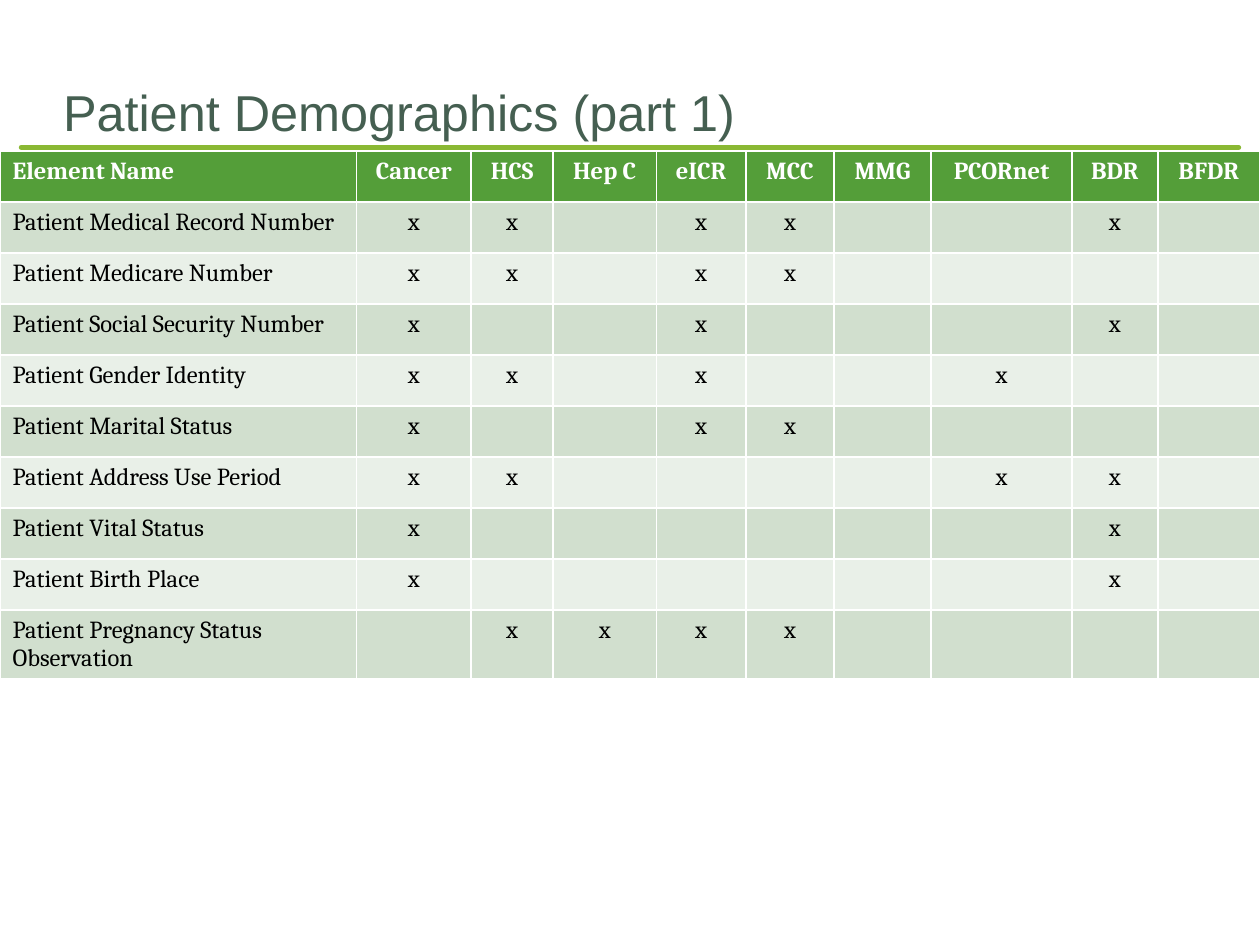
from lxml.etree import SubElement
from pptx import Presentation
from pptx.dml.color import RGBColor
from pptx.enum.shapes import MSO_CONNECTOR
from pptx.enum.text import MSO_ANCHOR, MSO_AUTO_SIZE, PP_ALIGN
from pptx.oxml.ns import qn
from pptx.util import Inches, Pt

COLORS = {
    "title": "455F51",
    "rule": "8AB833",
    "shadow": "808080",
    "header": "549E39",
    "header text": "FFFFFF",
    "odd row": "D1DFCE",
    "even row": "E9F0E8",
    "text": "000000",
}
SYSTEMS = ["Cancer", "HCS", "Hep C", "eICR", "MCC", "MMG", "PCORnet", "BDR", "BFDR"]
COLUMN_SHARES = [0.283, 0.091, 0.065, 0.082, 0.071, 0.07, 0.077, 0.112, 0.068, 0.081]
ELEMENTS = {
    "Patient Medical Record Number": ["Cancer", "HCS", "eICR", "MCC", "BDR"],
    "Patient Medicare Number": ["Cancer", "HCS", "eICR", "MCC"],
    "Patient Social Security Number": ["Cancer", "eICR", "BDR"],
    "Patient Gender Identity": ["Cancer", "HCS", "eICR", "PCORnet"],
    "Patient Marital Status": ["Cancer", "eICR", "MCC"],
    "Patient Address Use Period": ["Cancer", "HCS", "PCORnet", "BDR"],
    "Patient Vital Status": ["Cancer", "BDR"],
    "Patient Birth Place": ["Cancer", "BDR"],
    "Patient Pregnancy Status Observation": ["HCS", "Hep C", "eICR", "MCC"],
}


class SlideBuilder:
    """Adds styled elements, with lengths given as shares of the slide's size."""

    def __init__(self, deck, slide):
        self.width, self.height = deck.slide_width, deck.slide_height
        self.slide = slide

    def across(self, share):
        return round(self.width * share)

    def down(self, share):
        return round(self.height * share)

    def style(self, para, font_name, size, color, bold=False, align=PP_ALIGN.LEFT):
        para.alignment = align
        font = para.font
        font.name, font.size, font.bold = font_name, Pt(size), bold
        font.color.rgb = RGBColor.from_string(COLORS[color])

    def title(self, text, left, top, width, height):
        box = self.slide.shapes.title
        box.left, box.top = self.across(left), self.down(top)
        box.width, box.height = self.across(width), self.down(height)
        frame = box.text_frame
        frame.text = text
        frame.auto_size = MSO_AUTO_SIZE.NONE
        frame.vertical_anchor = MSO_ANCHOR.BOTTOM
        frame.margin_left = frame.margin_right = frame.margin_bottom = 0
        self.style(frame.paragraphs[0], "Arial", 28.8, "title")

    def rule(self, left, right, top):
        """Draws a horizontal line with round ends and a hard shadow below."""
        line = self.slide.shapes.add_connector(
            MSO_CONNECTOR.STRAIGHT,
            self.across(left), self.down(top), self.across(right), self.down(top),
        )
        line.line.width = Pt(3)
        line.line.color.rgb = RGBColor.from_string(COLORS["rule"])
        line.line._get_or_add_ln().set("cap", "rnd")
        effects = SubElement(line._element.spPr, qn("a:effectLst"))
        shadow = SubElement(effects, qn("a:outerShdw"), dist=str(Pt(3)), dir="5400000")
        color = SubElement(shadow, qn("a:srgbClr"), val=COLORS["shadow"])
        SubElement(color, qn("a:alpha"), val="40000")

    def table(self, rows, column_shares, top, height):
        frame = self.slide.shapes.add_table(
            len(rows), len(column_shares),
            0, self.down(top), self.width, self.down(height),
        )
        table = frame.table
        for column, share in zip(table.columns, column_shares):
            column.width = self.across(share)
        for row_index, row in enumerate(rows):
            header = row_index == 0
            fill = "header" if header else "odd row" if row_index % 2 else "even row"
            for column_index, text in enumerate(row):
                cell = table.cell(row_index, column_index)
                cell.fill.solid()
                cell.fill.fore_color.rgb = RGBColor.from_string(COLORS[fill])
                cell.text = text
                self.style(
                    cell.text_frame.paragraphs[0], "Cambria", 14,
                    "header text" if header else "text", bold=header,
                    align=PP_ALIGN.CENTER if column_index else PP_ALIGN.LEFT,
                )


def main():
    deck = Presentation()
    deck.slide_width, deck.slide_height = Inches(10), Inches(7.5)
    title_only = deck.slide_layouts[5]
    builder = SlideBuilder(deck, deck.slides.add_slide(title_only))

    builder.title("Patient Demographics (part 1)", 0.05, 0.07, 0.9, 0.08)
    builder.rule(0.017, 0.983, 0.156)
    rows = [["Element Name", *SYSTEMS]]
    for element, users in ELEMENTS.items():
        rows.append([element, *("x" if system in users else "" for system in SYSTEMS)])
    builder.table(rows, COLUMN_SHARES, top=0.16, height=0.54)
    deck.save("out.pptx")


if __name__ == "__main__":
    main()
